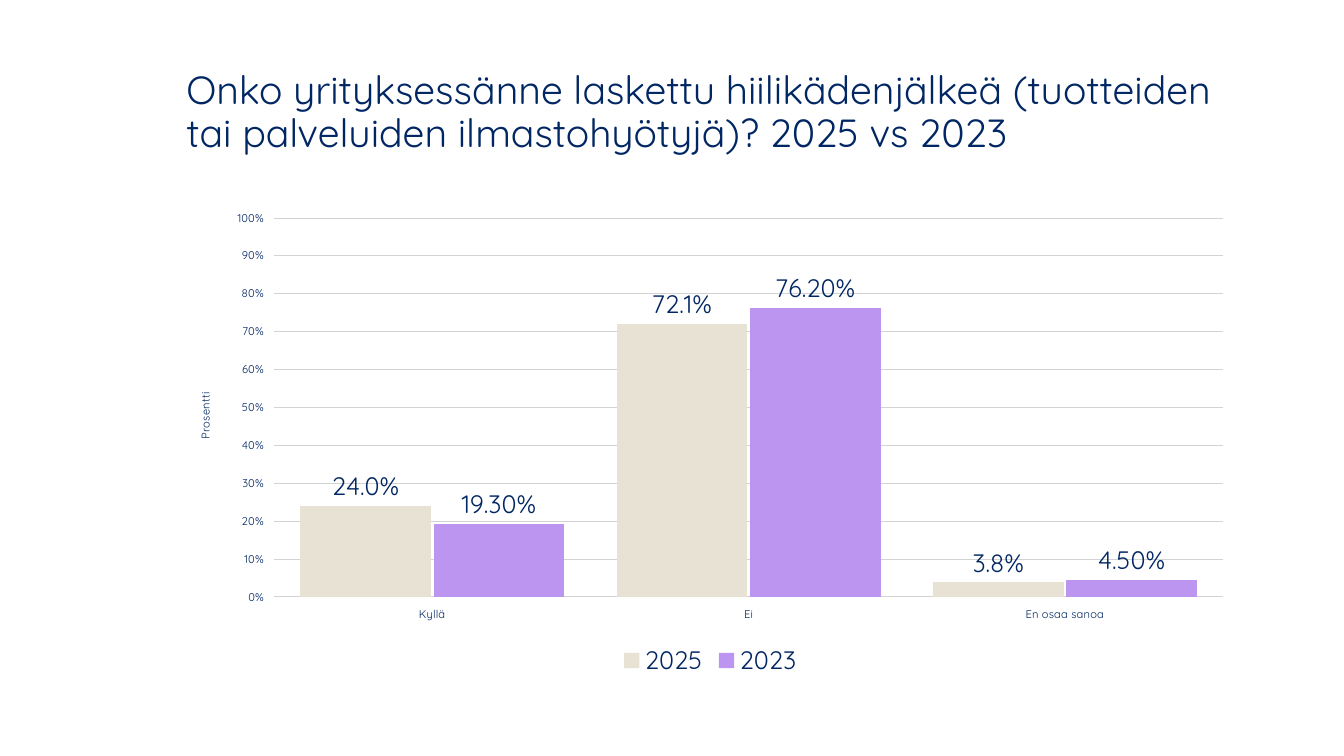
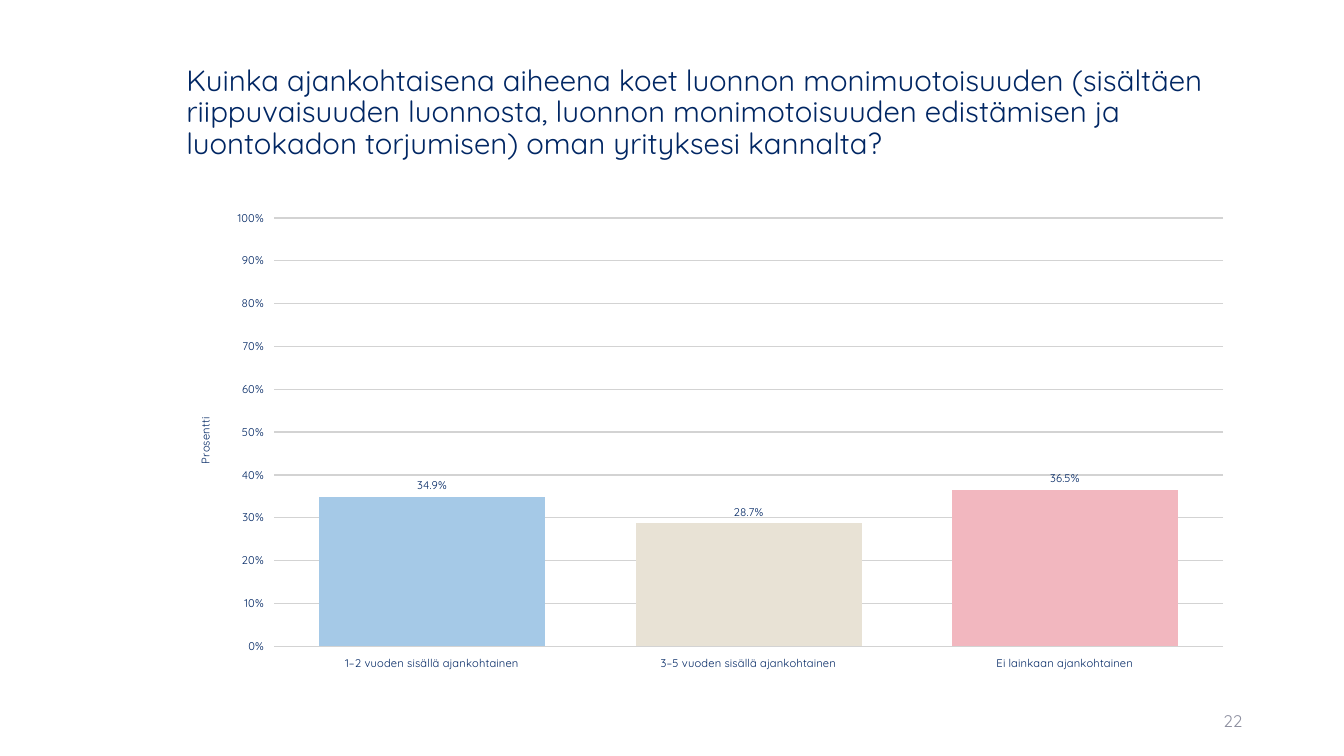
import pptx
import pptx.chart.data
import pptx.dml.color
import pptx.enum.chart
import pptx.enum.text
import pptx.oxml
import pptx.oxml.ns
import pptx.util
from pptx.util import Inches

FONT = "Quicksand"
COLORS = {
    "navy": "002663",
    "grey": "8C8E9F",
    "grid": "D3D3D3",
    "sand": "E8E2D5",
    "violet": "BB95EF",
    "blue": "A5C9E7",
    "pink": "F2B7BF",
}
LEFT, WIDTH = Inches(1.75), Inches(10.59)
AXIS_SIZE = 8

SLIDES = [
    {
        "title": "Onko yrityksessänne laskettu hiilikädenjälkeä (tuotteiden "
                 "tai palveluiden ilmastohyötyjä)? 2025 vs 2023",
        "title_size": 28,
        "categories": ["Kyllä", "Ei", "En osaa sanoa"],
        "series": [
            {"name": "2025", "values": [0.24, 0.721, 0.038],
             "colors": ["sand"], "format": "0.0%"},
            {"name": "2023", "values": [0.193, 0.762, 0.045],
             "colors": ["violet"], "format": "0.00%"},
        ],
        "label_size": 18,
        "grid_width": 0.5,
        "plot_height": 0.79,
        "legend": True,
        "number": None,
    },
    {
        "title": "Kuinka ajankohtaisena aiheena koet luonnon monimuotoisuuden "
                 "(sisältäen riippuvaisuuden luonnosta, luonnon monimotoisuuden "
                 "edistämisen ja luontokadon torjumisen) oman yrityksesi kannalta?",
        "title_size": 21,
        "categories": ["1–2 vuoden sisällä ajankohtainen",
                       "3–5 vuoden sisällä ajankohtainen",
                       "Ei lainkaan ajankohtainen"],
        "series": [
            {"name": "Series 1", "values": [0.349, 0.287, 0.365],
             "colors": ["blue", "sand", "pink"], "format": "0.0%"},
        ],
        "label_size": 8,
        "grid_width": 1,
        "plot_height": 0.893,
        "legend": False,
        "number": "22",
    },
]


def rgb(name):
    return pptx.dml.color.RGBColor.from_string(COLORS[name])


def style_font(font, size, color="navy"):
    font.name = FONT
    font.size = pptx.util.Pt(size)
    font.bold = False
    font.color.rgb = rgb(color)


def paint(target, color):
    target.format.fill.solid()
    target.format.fill.fore_color.rgb = rgb(color)


def add_text(page, text, position, size, color="navy"):
    box = page.shapes.add_textbox(*position)
    frame = box.text_frame
    frame.word_wrap = True
    frame.vertical_anchor = pptx.enum.text.MSO_ANCHOR.MIDDLE
    frame.text = text
    paragraph = frame.paragraphs[0]
    style_font(paragraph.runs[0].font, size, color)
    return paragraph


def set_plot_area(chart, **fractions):
    """Fix the inner plot area as fractions of the chart frame."""
    plot_area = chart.element.xpath("c:chart/c:plotArea")[0]
    for old in plot_area.xpath("c:layout"):
        plot_area.remove(old)
    values = "".join(f'<c:{key} val="{value}"/>' for key, value in fractions.items())
    plot_area.insert(0, pptx.oxml.parse_xml(
        f'<c:layout {pptx.oxml.ns.nsdecls("c")}><c:manualLayout>'
        '<c:layoutTarget val="inner"/><c:xMode val="edge"/><c:yMode val="edge"/>'
        f'{values}</c:manualLayout></c:layout>'))


def style_axes(chart, grid_width):
    for axis in (chart.category_axis, chart.value_axis):
        style_font(axis.tick_labels.font, AXIS_SIZE)
        axis.format.line.fill.background()
    axis = chart.value_axis
    axis.minimum_scale, axis.maximum_scale, axis.major_unit = 0, 1, 0.1
    axis.tick_labels.number_format = "0%"
    axis.tick_labels.number_format_is_linked = False
    grid = axis.major_gridlines.format.line
    grid.color.rgb = rgb("grid")
    grid.width = pptx.util.Pt(grid_width)
    frame = axis.axis_title.text_frame
    frame.text = "Prosentti"
    style_font(frame.paragraphs[0].runs[0].font, AXIS_SIZE)


def style_series(series, content, label_size):
    paint(series, content["colors"][0])
    if len(content["colors"]) > 1:
        for index, color in enumerate(content["colors"]):
            paint(series.points[index], color)
    labels = series.data_labels
    labels.show_value = True
    labels.number_format = content["format"]
    labels.number_format_is_linked = False
    labels.position = pptx.enum.chart.XL_LABEL_POSITION.OUTSIDE_END
    style_font(labels.font, label_size)


def add_column_chart(page, content):
    data = pptx.chart.data.CategoryChartData(number_format="0.0%")
    data.categories = content["categories"]
    for item in content["series"]:
        data.add_series(item["name"], item["values"])
    chart = page.shapes.add_chart(
        pptx.enum.chart.XL_CHART_TYPE.COLUMN_CLUSTERED,
        LEFT, Inches(2), WIDTH, Inches(4.76), data).chart
    style_font(chart.font, 18)
    chart.has_title = False
    chart.has_legend = content["legend"]
    if content["legend"]:
        chart.legend.position = pptx.enum.chart.XL_LEGEND_POSITION.BOTTOM
        chart.legend.include_in_layout = False
        style_font(chart.legend.font, 18)
    plot = chart.plots[0]
    plot.gap_width, plot.overlap = 40, -2
    plot.vary_by_categories = False
    style_axes(chart, content["grid_width"])
    for series, item in zip(plot.series, content["series"]):
        style_series(series, item, content["label_size"])
    set_plot_area(chart, x=0.0914, y=0.034, w=0.889, h=content["plot_height"])


def add_page(deck, content):
    page = deck.slides.add_slide(deck.slide_layouts[6])
    title = add_text(page, content["title"],
                     (LEFT, Inches(0.4), WIDTH, Inches(1.45)), content["title_size"])
    title.line_spacing = 0.9
    if content["number"]:
        number = add_text(page, content["number"],
                          (Inches(9.42), Inches(6.95), Inches(3), Inches(0.4)),
                          12, "grey")
        number.alignment = pptx.enum.text.PP_ALIGN.RIGHT
        number.space_after = pptx.util.Pt(6)
    add_column_chart(page, content)


def main():
    deck = pptx.Presentation()
    deck.slide_width, deck.slide_height = Inches(13.33), Inches(7.5)
    for content in SLIDES:
        add_page(deck, content)
    deck.save("out.pptx")


if __name__ == "__main__":
    main()
